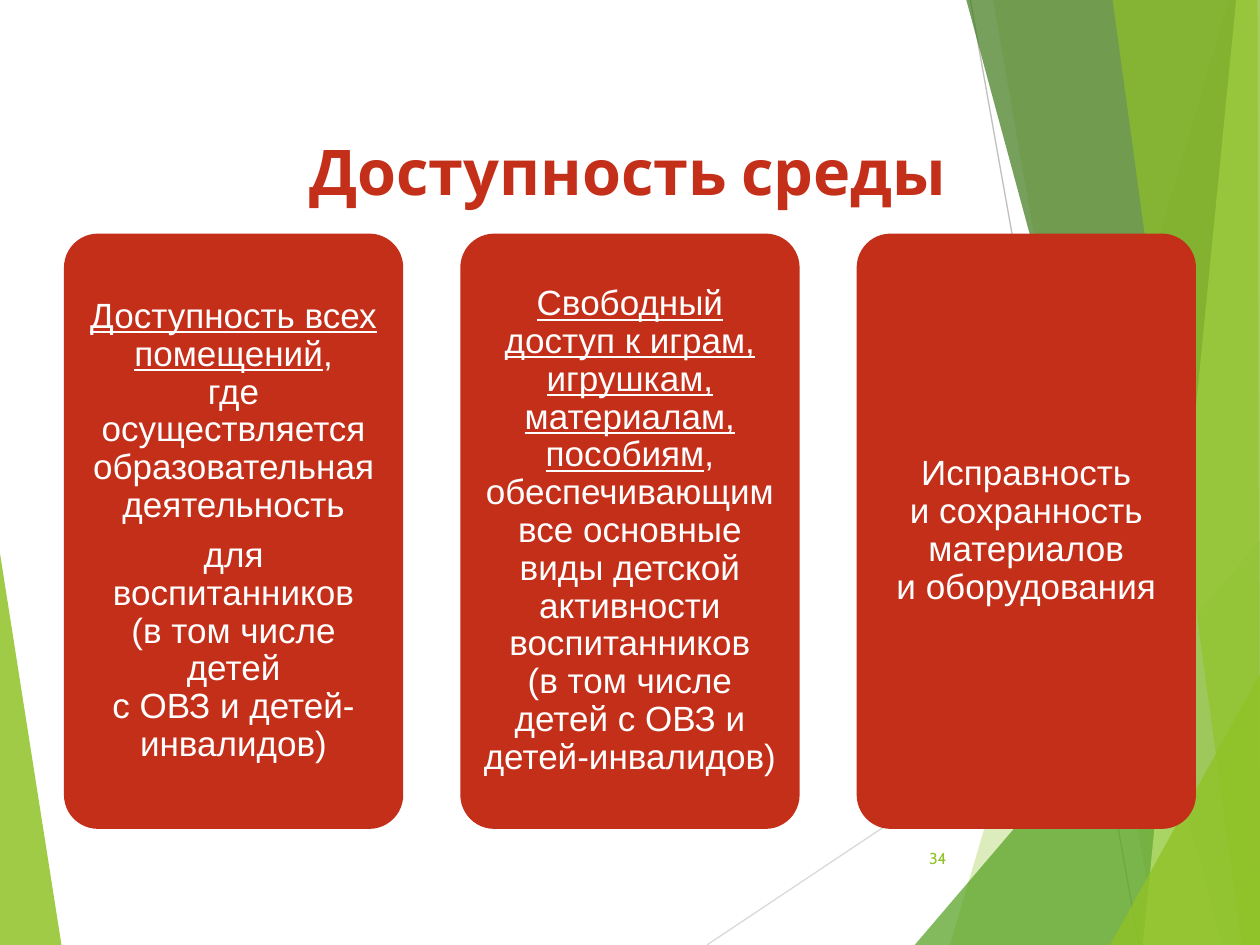
from lxml.etree import SubElement
from pptx import Presentation
from pptx.dml.color import RGBColor
from pptx.enum.shapes import MSO_CONNECTOR, MSO_SHAPE
from pptx.enum.text import MSO_ANCHOR, MSO_AUTO_SIZE, PP_ALIGN
from pptx.oxml.ns import qn
from pptx.util import Cm, Pt

WIDTH, HEIGHT = 25.4, 19.05
RED, GREEN, WHITE = "C42F1A", "90C226", "FFFFFF"


def color(hex_string):
    return RGBColor.from_string(hex_string)


def style(paragraph, font_name, size, hex_string, alignment):
    paragraph.alignment = alignment
    paragraph.font.name = font_name
    paragraph.font.size = Pt(size)
    paragraph.font.color.rgb = color(hex_string)


presentation = Presentation()
presentation.slide_width, presentation.slide_height = Cm(WIDTH), Cm(HEIGHT)
slide = presentation.slides.add_slide(presentation.slide_layouts[5])
shapes = slide.shapes

# Thin background lines
for start_x, start_y, end_x, end_y, line_color in [
    (14.25, HEIGHT, WIDTH, 11.61, "D9D9D9"),
    (19.56, 0, 22.96, HEIGHT, "BFBFBF"),
]:
    line = shapes.add_connector(
        MSO_CONNECTOR.STRAIGHT, Cm(start_x), Cm(start_y), Cm(end_x), Cm(end_y))
    line.line.color.rgb = color(line_color)
    line.line.width = Pt(0.75)
    SubElement(line._element.spPr, qn("a:effectLst"))

# Translucent facets: colour, opacity in percent, corners
facets = [
    (GREEN, 85, [(0, 11.15), (1.24, HEIGHT), (0, HEIGHT)]),
    (GREEN, 30, [(24.77, 0), (19.15, HEIGHT), (WIDTH, HEIGHT), (WIDTH, 0)]),
    (GREEN, 20, [(20.02, 0), (23.34, HEIGHT), (WIDTH, HEIGHT), (WIDTH, 0)]),
    ("54A021", 72, [(18.44, HEIGHT), (WIDTH, 10.9), (WIDTH, HEIGHT)]),
    ("3F7819", 70, [(19.48, 0), (24.64, HEIGHT), (WIDTH, HEIGHT), (WIDTH, 0)]),
    ("C0E474", 70, [(24.92, 0), (23.04, HEIGHT), (WIDTH, HEIGHT), (WIDTH, 0)]),
    (GREEN, 65, [(22.43, 0), (25.04, HEIGHT), (WIDTH, HEIGHT), (25.35, 0)]),
    (GREEN, 80, [(22.38, HEIGHT), (WIDTH, 13.59), (WIDTH, HEIGHT)]),
]
for fill_color, opacity, corners in facets:
    points = [(Cm(x), Cm(y)) for x, y in corners]
    builder = shapes.build_freeform(*points[0])
    builder.add_line_segments(points[1:], close=True)
    facet = builder.convert_to_shape()
    facet.shadow.inherit = False
    facet.line.fill.background()
    facet.fill.solid()
    facet.fill.fore_color.rgb = color(fill_color)
    rgb = facet._element.spPr.find(qn("a:solidFill")).find(qn("a:srgbClr"))
    SubElement(rgb, qn("a:alpha"), val=str(opacity * 1000))

# Title
title = shapes.title
title.left, title.top, title.width, title.height = Cm(1.7), Cm(1.7), Cm(17.63), Cm(3.66)
title.text_frame.text = "Доступность среды"
title.text_frame.vertical_anchor = MSO_ANCHOR.MIDDLE
title.text_frame.auto_size = MSO_AUTO_SIZE.NONE
heading = title.text_frame.paragraphs[0]
style(heading, "Cabin", 36, RED, PP_ALIGN.RIGHT)
heading.font.bold = True
heading.line_spacing = 0.9

# Cards: paragraphs made of (text, underlined) pieces
cards = [
    [
        [("Доступность всех помещений", True),
         (",\nгде осуществляется образовательная деятельность", False)],
        [("для воспитанников\n(в том числе детей\nс ОВЗ и детей-инвалидов)", False)],
    ],
    [
        [("Свободный", True), (" ", False),
         ("доступ к играм, игрушкам, материалам, пособиям", True),
         (", обеспечивающим все основные виды детской активности воспитанников\n"
          "(в том числе детей с ОВЗ и детей-инвалидов)", False)],
    ],
    [
        [("Исправность\nи сохранность материалов\nи оборудования", False)],
    ],
]
for column, card_paragraphs in enumerate(cards):
    card = shapes.add_shape(
        MSO_SHAPE.ROUNDED_RECTANGLE, Cm(1.29 + 7.99 * column), Cm(4.71), Cm(6.84), Cm(12))
    card.adjustments[0] = 0.1
    card.shadow.inherit = False
    card.line.fill.background()
    card.fill.solid()
    card.fill.fore_color.rgb = color(RED)
    frame = card.text_frame
    frame.word_wrap = True
    frame.vertical_anchor = MSO_ANCHOR.MIDDLE
    frame.margin_left = frame.margin_right = Cm(0.2)
    frame.margin_top = frame.margin_bottom = Cm(0.2)
    for index, pieces in enumerate(card_paragraphs):
        paragraph = frame.add_paragraph() if index else frame.paragraphs[0]
        style(paragraph, "Arial", 20, WHITE, PP_ALIGN.CENTER)
        paragraph.line_spacing = 0.9
        paragraph.space_after = Pt(7)
        for text, underlined in pieces:
            for row, row_text in enumerate(text.split("\n")):
                if row:
                    paragraph.add_line_break()
                run = paragraph.add_run()
                run.text = row_text
                run.font.underline = underlined

# Slide number
number = shapes.add_textbox(Cm(17.91), Cm(16.79), Cm(1.42), Cm(1.02))
number.text_frame.word_wrap = True
number.text_frame.vertical_anchor = MSO_ANCHOR.MIDDLE
number.text_frame.text = "34"
style(number.text_frame.paragraphs[0], "Cabin", 9, GREEN, PP_ALIGN.RIGHT)

presentation.save("out.pptx")
